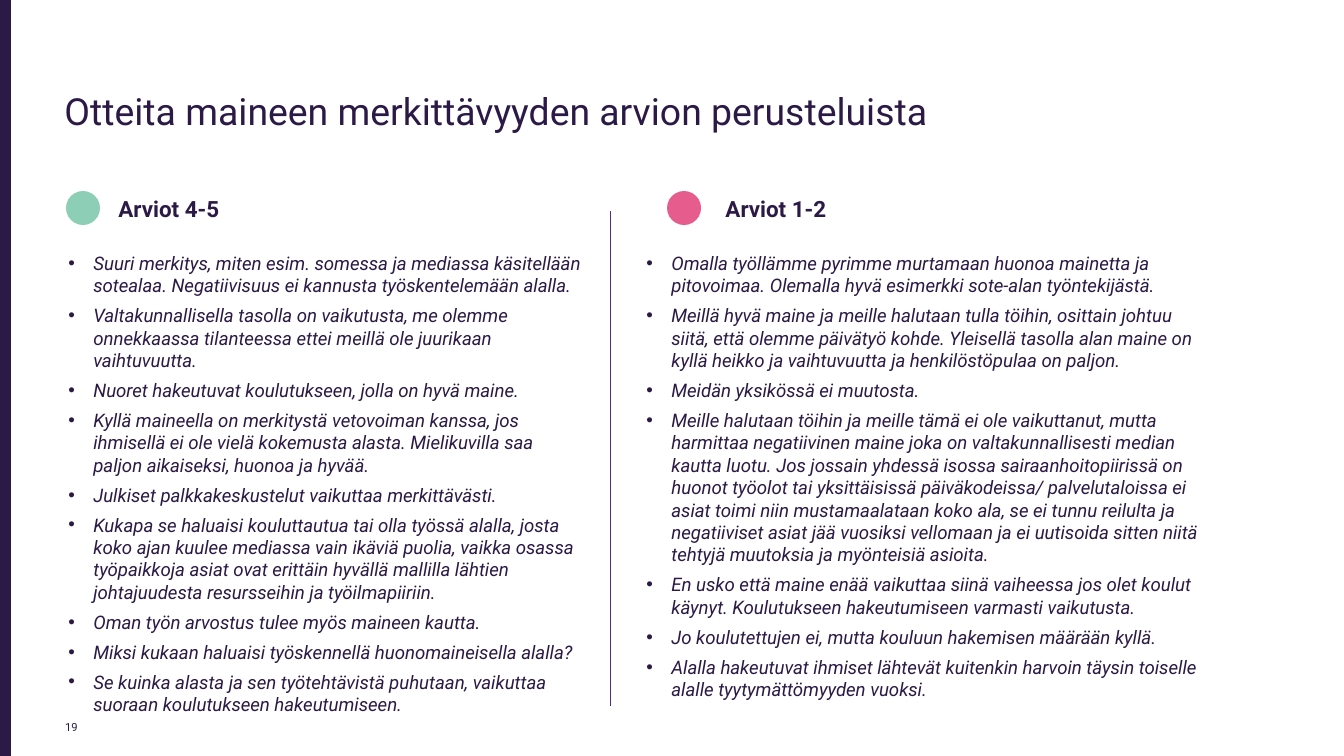
from lxml.etree import SubElement
from pptx import Presentation
from pptx.dml.color import RGBColor
from pptx.enum.shapes import MSO_CONNECTOR, MSO_SHAPE
from pptx.enum.text import MSO_ANCHOR as ANCHOR, MSO_AUTO_SIZE as AUTO_SIZE, PP_ALIGN as ALIGN
from pptx.oxml.ns import qn
from pptx.util import Pt

PX = 914400 / 134.4
INK = RGBColor(0x2C, 0x1A, 0x46)
VIOLET = RGBColor(0x4F, 0x2F, 0x80)
GREEN = RGBColor(0x8D, 0xCF, 0xB6)
PINK = RGBColor(0xE6, 0x5C, 0x8D)

HIGH_RATINGS = [
    "Suuri merkitys, miten esim. somessa ja mediassa käsitellään sotealaa. Negatiivisuus ei kannusta työskentelemään alalla.",
    "Valtakunnallisella tasolla on vaikutusta, me olemme onnekkaassa tilanteessa ettei meillä ole juurikaan vaihtuvuutta.",
    "Nuoret hakeutuvat koulutukseen, jolla on hyvä maine.",
    "Kyllä maineella on merkitystä vetovoiman kanssa, jos ihmisellä ei ole vielä kokemusta alasta. "
    "Mielikuvilla saa paljon aikaiseksi, huonoa ja hyvää.",
    "Julkiset palkkakeskustelut vaikuttaa merkittävästi.",
    "Kukapa se haluaisi kouluttautua tai olla työssä alalla, josta koko ajan kuulee mediassa vain ikäviä puolia, "
    "vaikka osassa työpaikkoja asiat ovat erittäin hyvällä mallilla lähtien johtajuudesta resursseihin ja työilmapiiriin.",
    "Oman työn arvostus tulee myös maineen kautta.",
    "Miksi kukaan haluaisi työskennellä huonomaineisella alalla?",
    "Se kuinka alasta ja sen työtehtävistä puhutaan, vaikuttaa suoraan koulutukseen hakeutumiseen.",
]
LOW_RATINGS = [
    "Omalla työllämme pyrimme murtamaan huonoa mainetta ja pitovoimaa. Olemalla hyvä esimerkki sote-alan työntekijästä.",
    "Meillä hyvä maine ja meille halutaan tulla töihin, osittain johtuu siitä, että olemme päivätyö kohde. "
    "Yleisellä tasolla alan maine on kyllä heikko ja vaihtuvuutta ja henkilöstöpulaa on paljon.",
    "Meidän yksikössä ei muutosta.",
    "Meille halutaan töihin ja meille tämä ei ole vaikuttanut, mutta harmittaa negatiivinen maine joka on "
    "valtakunnallisesti median kautta luotu. Jos jossain yhdessä isossa sairaanhoitopiirissä on huonot työolot tai "
    "yksittäisissä päiväkodeissa/ palvelutaloissa ei asiat toimi niin mustamaalataan koko ala, se ei tunnu reilulta ja "
    "negatiiviset asiat jää vuosiksi vellomaan ja ei uutisoida sitten niitä tehtyjä muutoksia ja myönteisiä asioita.",
    "En usko että maine enää vaikuttaa siinä vaiheessa jos olet koulut käynyt. Koulutukseen hakeutumiseen varmasti vaikutusta.",
    "Jo koulutettujen ei, mutta kouluun hakemisen määrään kyllä.",
    "Alalla hakeutuvat ihmiset lähtevät kuitenkin harvoin täysin toiselle alalle tyytymättömyyden vuoksi.",
]


def px(*lengths):
    return [round(length * PX) for length in lengths]


def write(box, place, lines, size, anchor=ANCHOR.TOP, spacing=1.0, indent=0,
          bold=False, italic=False, bullets=False):
    box.left, box.top, box.width, box.height = px(*place)
    frame = box.text_frame
    frame.word_wrap = True
    frame.auto_size = AUTO_SIZE.NONE
    frame.vertical_anchor = anchor
    frame.text = "\n".join(lines)
    for number, paragraph in enumerate(frame.paragraphs):
        properties = paragraph._p.get_or_add_pPr()
        margin = px(indent)[0]
        properties.set("marL", str(margin))
        properties.set("indent", str(-margin if bullets else 0))
        if bullets:
            SubElement(properties, qn("a:buChar")).set("char", "•")
        paragraph.alignment = ALIGN.LEFT
        paragraph.line_spacing = spacing
        paragraph.space_before = Pt(4 if number else 0)
        for run in paragraph.runs:
            run.font.name = "Roboto"
            run.font.size = Pt(size)
            run.font.bold = bold
            run.font.italic = italic
            run.font.color.rgb = INK


deck = Presentation()
deck.slide_width, deck.slide_height = px(1344, 756)
slide = deck.slides.add_slide(deck.slide_layouts[4])
title, high_heading, high_list, low_heading, low_list = slide.placeholders

# Title and page number
write(title, (51, 40, 1163, 147), ["Otteita maineen merkittävyyden arvion perusteluista"],
      20, ANCHOR.MIDDLE, spacing=0.9)
page_number = slide.shapes.add_textbox(*px(52, 700, 55, 40))
write(page_number, (52, 700, 55, 40), ["19"], 6, ANCHOR.BOTTOM)

# Column headings
write(high_heading, (55, 191, 386, 85), ["Arviot 4-5"], 12, spacing=0.9, indent=50, bold=True)
write(low_heading, (650, 191, 386, 85), ["Arviot 1-2"], 12, spacing=0.9, indent=62, bold=True)

# Quotes
write(high_list, (55, 245, 540, 406), HIGH_RATINGS, 10, indent=25, italic=True, bullets=True)
write(low_list, (633, 245, 578, 406), LOW_RATINGS, 10, indent=25, italic=True, bullets=True)

# Side bar and rating dots
for kind, place, colour in [
    (MSO_SHAPE.RECTANGLE, (0, 0, 11, 756), INK),
    (MSO_SHAPE.OVAL, (66, 191, 34, 34), GREEN),
    (MSO_SHAPE.OVAL, (667, 191, 34, 34), PINK),
]:
    mark = slide.shapes.add_shape(kind, *px(*place))
    mark.shadow.inherit = False
    mark.fill.solid()
    mark.fill.fore_color.rgb = colour
    mark.line.fill.background()

# Column divider
divider = slide.shapes.add_connector(MSO_CONNECTOR.STRAIGHT, *px(610, 211, 610, 706))
divider.line.color.rgb = VIOLET
divider.line.width = Pt(0.5)
SubElement(divider._element.spPr, qn("a:effectLst"))

deck.save("out.pptx")
